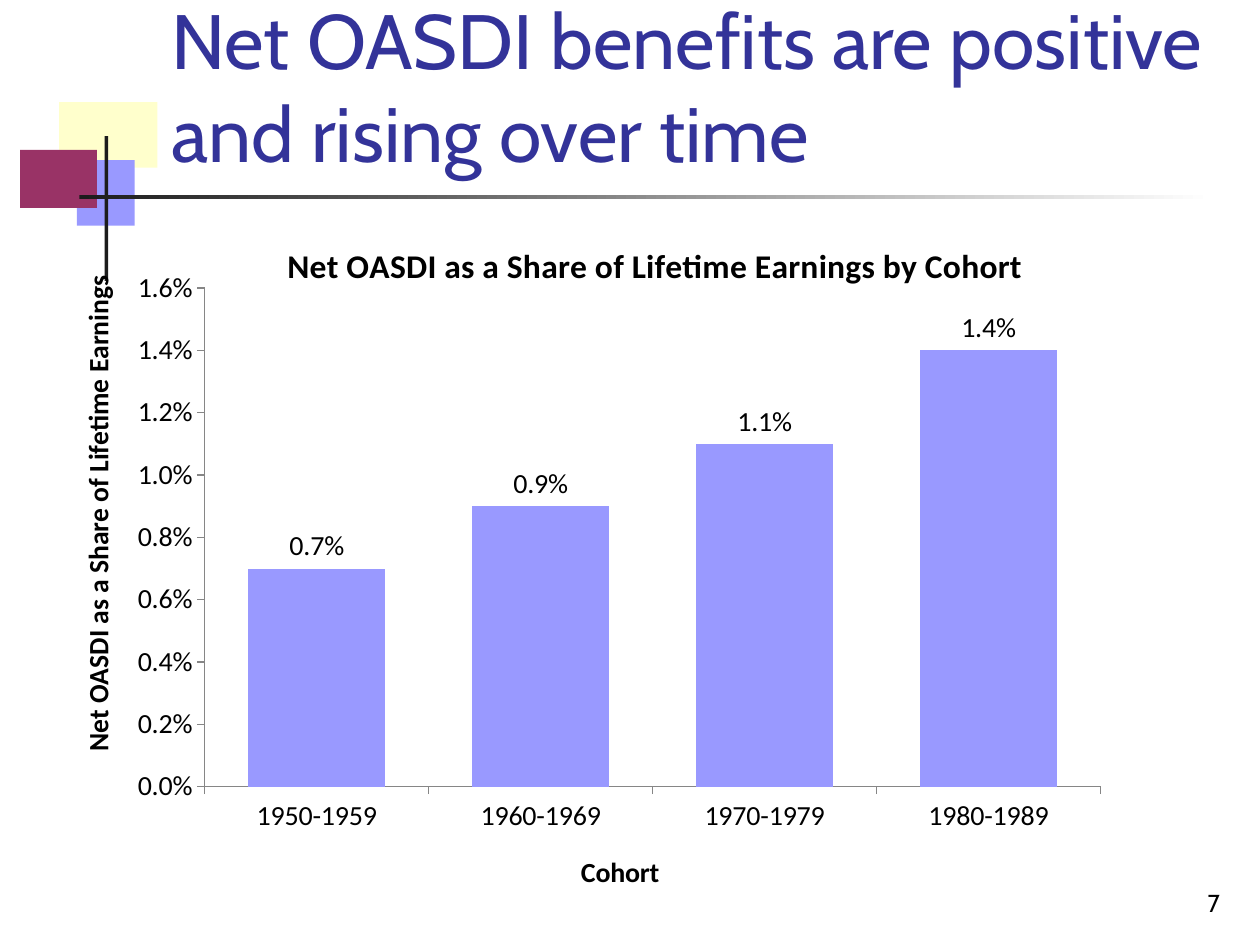
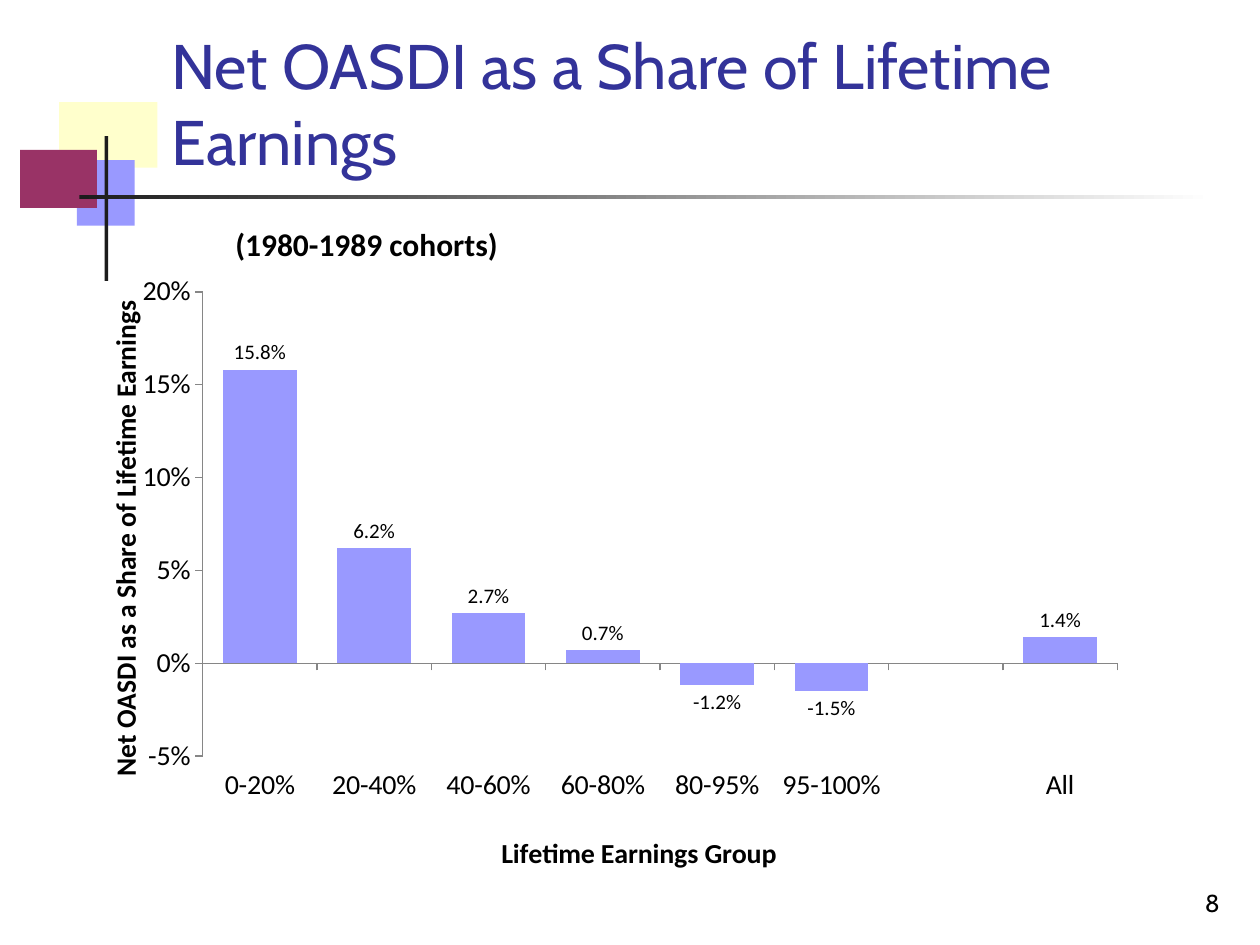
import dataclasses
import typing

import lxml.etree
import pptx
import pptx.chart.data
import pptx.dml.color
import pptx.enum.chart
import pptx.enum.shapes
import pptx.enum.text
import pptx.oxml.ns
import pptx.util

Inches = pptx.util.Inches
Pt = pptx.util.Pt
qn = pptx.oxml.ns.qn
Align = pptx.enum.text.PP_ALIGN
Anchor = pptx.enum.text.MSO_ANCHOR


def rgb(code: str) -> pptx.dml.color.RGBColor:
    return pptx.dml.color.RGBColor.from_string(code)


@dataclasses.dataclass(frozen=True)
class Theme:
    title: str = "333399"
    text: str = "000000"
    bar: str = "9999FF"
    cream: str = "FFFFCC"
    plum: str = "993366"
    dark: str = "1C1C1C"
    white: str = "FFFFFF"
    axis: str = "868686"
    head: str = "Cabin"
    body: str = "Calibri"
    page_size: float = 14
    note_size: float = 18
    axis_size: float = 16
    chart_size: float = 19.2


THEME = Theme()


class Box(typing.NamedTuple):
    left: float
    top: float
    width: float
    height: float

    def emu(self) -> list[int]:
        return [Inches(side) for side in self]


class Block(typing.NamedTuple):
    box: Box
    fill: str
    fade: str = ""


class Label(typing.NamedTuple):
    text: str
    left: float
    top: float


@dataclasses.dataclass(frozen=True)
class Graph:
    box: Box
    plot: Box
    data: dict[str, float | None]
    group: Label
    value: Label
    scale: tuple[float, float, float]
    form: str
    gap: int
    label_size: float
    title: Label | None = None


@dataclasses.dataclass(frozen=True)
class Page:
    title: str
    size: float
    number: int
    graph: Graph
    note: str = ""


MOTIF = [
    Block(Box(0.47, 0.81, 0.48, 0.52), THEME.cream),
    Block(Box(0.89, 0.81, 0.36, 0.52), THEME.cream),
    Block(Box(0.61, 1.27, 0.46, 0.52), THEME.bar),
    Block(Box(0.16, 1.19, 0.61, 0.46), THEME.plum),
    Block(Box(0.83, 1.08, 0.03, 1.15), THEME.dark),
    Block(Box(0.63, 1.55, 9, 0.03), THEME.dark, THEME.white),
]
TITLE_BOX = Box(1.26, 0.23, 8.52, 1.23)
PAGE_BOX = Box(7.7, 6.83, 2.08, 0.5)
NOTE_BOX = Box(1.77, 1.74, 2.76, 0.4)
SHARE = "Net OASDI as a Share of Lifetime Earnings"

PAGES = [
    Page(
        "Net OASDI benefits are positive and rising over time", 44, 7,
        Graph(
            box=Box(0.24, 1.66, 8.66, 5.47),
            plot=Box(0.16, 0.116, 0.821, 0.734),
            data={"1950-1959": 0.007, "1960-1969": 0.009,
                  "1970-1979": 0.011, "1980-1989": 0.014},
            group=Label("Cohort", 0.5, 0.94),
            value=Label(SHARE, 0.04, 0.1),
            scale=(0, 0.016, 0.002), form="0.0%", gap=64, label_size=16,
            title=Label(f"{SHARE} by Cohort", 0.23, 0.04),
        ),
    ),
    Page(
        SHARE, 36, 8,
        Graph(
            box=Box(0.55, 1.74, 8.47, 5.24),
            plot=Box(0.125, 0.112, 0.857, 0.715),
            data={"0-20%": 0.158, "20-40%": 0.062, "40-60%": 0.027,
                  "60-80%": 0.007, "80-95%": -0.012, "95-100%": -0.015,
                  "": None, "All": 0.014},
            group=Label("Lifetime Earnings Group", 0.4, 0.94),
            value=Label(SHARE, 0.03, 0.13),
            scale=(-0.05, 0.2, 0.05), form="0%", gap=55, label_size=12,
        ),
        note="(1980-1989 cohorts)",
    ),
]


def apply(target: object, **form: object) -> None:
    for name, value in form.items():
        setattr(target, name, value)


def style(font: typing.Any, face: str, size: float, color: str = THEME.text,
          bold: bool = False) -> None:
    apply(font, name=face, size=Pt(size), bold=bold)
    font.color.rgb = rgb(color)


def block(slide: typing.Any, item: Block) -> None:
    kind = pptx.enum.shapes.MSO_SHAPE.RECTANGLE
    shape = slide.shapes.add_shape(kind, *item.box.emu())
    shape.shadow.inherit = False
    shape.line.fill.background()
    if item.fade:
        shape.fill.gradient()
        shape.fill.gradient_angle = 0
        for stop, color in zip(shape.fill.gradient_stops, (item.fill, item.fade)):
            stop.color.rgb = rgb(color)
    else:
        shape.fill.solid()
        shape.fill.fore_color.rgb = rgb(item.fill)


def write(slide: typing.Any, box: Box, text: str, face: str, size: float,
          color: str = THEME.text, bold: bool = False,
          align: Align = Align.LEFT, anchor: Anchor = Anchor.BOTTOM) -> None:
    frame = slide.shapes.add_textbox(*box.emu()).text_frame
    apply(frame, word_wrap=True, vertical_anchor=anchor, text=text)
    line = frame.paragraphs[0]
    line.alignment = align
    style(line.runs[0].font, face, size, color, bold)


def place(node: typing.Any, spot: int, **sides: float) -> None:
    """Fix a chart part at fractions of the chart area."""
    frame = node.find(qn("c:layout"))
    if frame is None:
        frame = lxml.etree.SubElement(node, qn("c:layout"))
        node.insert(spot, frame)
    manual = lxml.etree.SubElement(frame, qn("c:manualLayout"))
    parts: dict[str, object] = {"layoutTarget": "inner"} if "w" in sides else {}
    parts |= {"xMode": "edge", "yMode": "edge", **sides}
    for name, value in parts.items():
        lxml.etree.SubElement(manual, qn(f"c:{name}")).set("val", str(value))


def caption(title: typing.Any, label: Label, size: float, turn: int = 0) -> None:
    frame = title.text_frame
    frame.text = label.text
    style(frame.paragraphs[0].runs[0].font, THEME.body, size, bold=True)
    body = frame._txBody.find(qn("a:bodyPr"))
    body.set("rot", str(turn * 60000))
    body.set("vert", "horz")
    place(title._element, 1, x=label.left, y=label.top)


def draw(slide: typing.Any, graph: Graph) -> None:
    enums = pptx.enum.chart
    data = pptx.chart.data.CategoryChartData(number_format="0.0%")
    data.categories = list(graph.data)
    data.add_series("Series 1", list(graph.data.values()))
    chart = slide.shapes.add_chart(
        enums.XL_CHART_TYPE.COLUMN_CLUSTERED, *graph.box.emu(), data).chart
    apply(chart, has_legend=False, has_title=graph.title is not None)
    style(chart.font, THEME.body, THEME.axis_size)
    if graph.title:
        caption(chart.chart_title, graph.title, THEME.chart_size)

    low, high, step = graph.scale
    apply(chart.value_axis, minimum_scale=low, maximum_scale=high, major_unit=step)
    apply(chart.value_axis.tick_labels, number_format=graph.form,
          number_format_is_linked=False)
    for axis, label, turn in ((chart.category_axis, graph.group, 0),
                              (chart.value_axis, graph.value, -90)):
        apply(axis, has_major_gridlines=False,
              major_tick_mark=enums.XL_TICK_MARK.OUTSIDE,
              minor_tick_mark=enums.XL_TICK_MARK.NONE,
              tick_label_position=enums.XL_TICK_LABEL_POSITION.LOW)
        axis.format.line.color.rgb = rgb(THEME.axis)
        axis.format.line.width = Pt(0.75)
        style(axis.tick_labels.font, THEME.body, THEME.axis_size)
        caption(axis.axis_title, label, THEME.axis_size, turn)

    plot = chart.plots[0]
    apply(plot, gap_width=graph.gap, vary_by_categories=False, has_data_labels=True)
    apply(plot.data_labels, show_value=True, number_format="0.0%",
          number_format_is_linked=False,
          position=enums.XL_LABEL_POSITION.OUTSIDE_END)
    style(plot.data_labels.font, THEME.body, graph.label_size)
    bars = plot.series[0]
    bars.invert_if_negative = False
    bars.format.fill.solid()
    bars.format.fill.fore_color.rgb = rgb(THEME.bar)
    area = chart._chartSpace.find(f".//{qn('c:plotArea')}")
    place(area, 0, **dict(zip("xywh", graph.plot)))


def build(deck: typing.Any, page: Page) -> None:
    slide = deck.slides.add_slide(deck.slide_layouts[6])
    for item in MOTIF:
        block(slide, item)
    write(slide, TITLE_BOX, page.title, THEME.head, page.size, THEME.title)
    write(slide, PAGE_BOX, str(page.number), THEME.head, THEME.page_size,
          align=Align.RIGHT)
    draw(slide, page.graph)
    if page.note:
        write(slide, NOTE_BOX, page.note, THEME.body, THEME.note_size,
              bold=True, anchor=Anchor.TOP)


def main() -> None:
    deck = pptx.Presentation()
    apply(deck, slide_width=Inches(10), slide_height=Inches(7.5))
    for page in PAGES:
        build(deck, page)
    deck.save("out.pptx")


if __name__ == "__main__":
    main()
